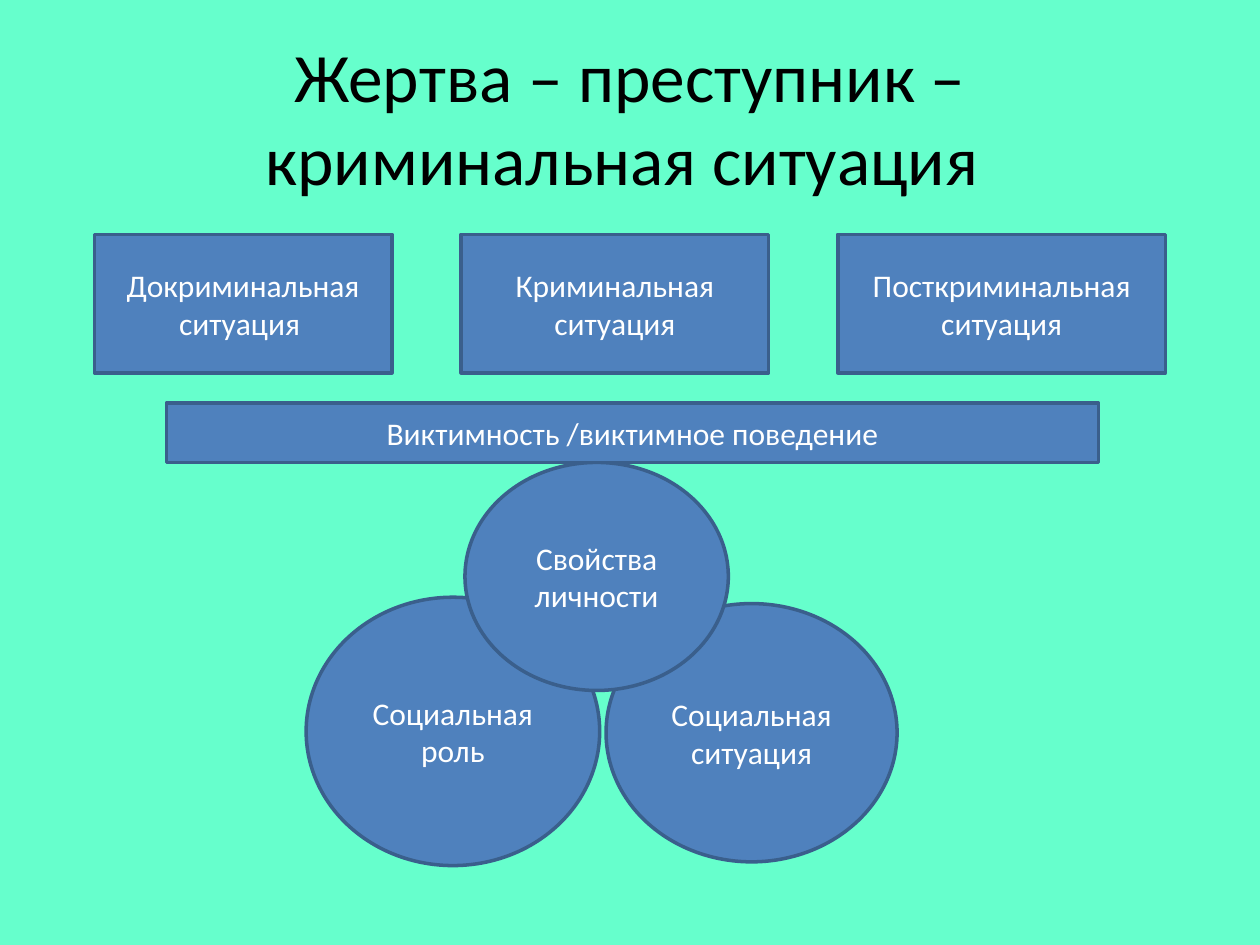
from dataclasses import dataclass

from pptx import Presentation
from pptx.dml.color import RGBColor
from pptx.enum.shapes import MSO_SHAPE as Kind
from pptx.enum.text import MSO_ANCHOR as Anchor, PP_ALIGN as Align
from pptx.shapes.base import BaseShape
from pptx.slide import Slide
from pptx.util import Inches, Pt

CELL = Inches(0.1)
COLS, ROWS = 100, 75
FONT = "Calibri"
MINT, BLUE, NAVY = "66FFCC", "4F81BD", "3A5F8C"
BLACK, WHITE = "000000", "FFFFFF"


@dataclass(frozen=True)
class Box:
    text: str
    col: float
    row: float
    wide: float
    high: float
    kind: Kind = Kind.RECTANGLE

    def place(self) -> list[int]:
        return [round(n * CELL) for n in (self.col, self.row, self.wide, self.high)]


TITLE = Box("Жертва – преступник – криминальная ситуация ", 5, 3, 90, 12.5)
STAGES = [
    ("Докриминальная ситуация ", 23.6),
    ("Криминальная ситуация", 24.4),
    ("Посткриминальная ситуация", 26),
]
CIRCLES = [
    Box("Социальная ситуация", 48.1, 47.9, 23.1, 20.5, Kind.OVAL),
    Box("Социальная роль", 24.3, 47.4, 23.3, 21.3, Kind.OVAL),
    Box("Свойства личности", 36.9, 36.7, 20.9, 18.1, Kind.OVAL),
]
BAR = Box("Виктимность /виктимное поведение", 13.2, 32, 74, 4.7)


def tint(code: str) -> RGBColor:
    return RGBColor.from_string(code)


def write(shape: BaseShape, text: str, size: float, code: str) -> None:
    frame = shape.text_frame
    frame.text = text
    frame.word_wrap = True
    frame.vertical_anchor = Anchor.MIDDLE
    para = frame.paragraphs[0]
    para.alignment = Align.CENTER
    font = para.runs[0].font
    font.name, font.size = FONT, Pt(size)
    font.color.rgb = tint(code)


def draw(slide: Slide, box: Box) -> None:
    shape = slide.shapes.add_shape(box.kind, *box.place())
    shape.shadow.inherit = False
    shape.fill.solid()
    shape.fill.fore_color.rgb = tint(BLUE)
    shape.line.color.rgb = tint(NAVY)
    shape.line.width = Pt(2)
    write(shape, box.text, 18, WHITE)


def stages(left: float = 7.5, gap: float = 5.5) -> list[Box]:
    row = []
    for text, wide in STAGES:
        row.append(Box(text, left, 18.6, wide, 11))
        left += wide + gap
    return row


def main() -> None:
    deck = Presentation()
    deck.slide_width, deck.slide_height = COLS * CELL, ROWS * CELL
    slide = deck.slides.add_slide(deck.slide_layouts[6])
    slide.background.fill.solid()
    slide.background.fill.fore_color.rgb = tint(MINT)
    write(slide.shapes.add_textbox(*TITLE.place()), TITLE.text, 39.6, BLACK)
    for box in [*stages(), *CIRCLES, BAR]:
        draw(slide, box)
    deck.save("out.pptx")


if __name__ == "__main__":
    main()
